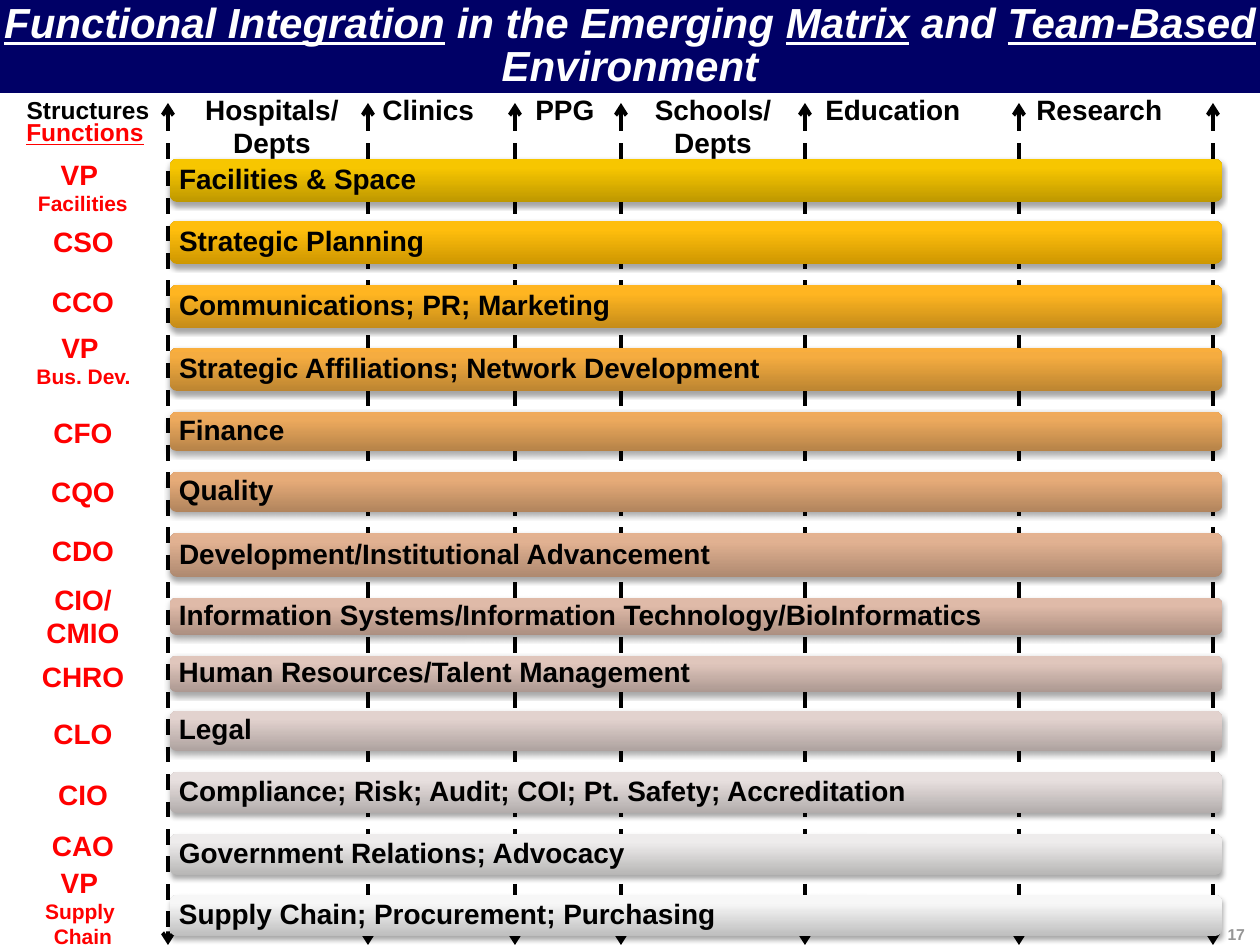
import pptx
import pptx.dml.color
import pptx.enum.dml
import pptx.enum.shapes
import pptx.enum.text
import pptx.oxml
import pptx.util

PX = pptx.util.Inches(1) / 126
NS = 'xmlns:a="http://schemas.openxmlformats.org/drawingml/2006/main"'
ALIGN = pptx.enum.text.PP_ALIGN
ANCHOR = pptx.enum.text.MSO_ANCHOR
AUTO = pptx.enum.text.MSO_AUTO_SIZE
SHAPE = pptx.enum.shapes.MSO_SHAPE
RED = "FF0000"

HEADERS = [
    (192, 86, 160, 81, ["Hospitals/", "Depts"], ALIGN.CENTER),
    (370, 86, 118, 47, ["Clinics"], ALIGN.LEFT),
    (523, 86, 86, 47, ["PPG"], ALIGN.LEFT),
    (641, 86, 144, 81, ["Schools/", "Depts"], ALIGN.CENTER),
    (813, 86, 163, 47, ["Education"], ALIGN.LEFT),
    (1024, 86, 152, 47, ["Research"], ALIGN.LEFT),
]
COLUMN_XS = [368, 515, 621, 805, 1019, 168, 1213]
BARS = [
    (159, 43, "Facilities & Space", "BE9800", "F7C600", "F8C700"),
    (221, 43, "Strategic Planning", "CE9700", "FFBE0D", "FFBF0E"),
    (285, 43, "Communications; PR; Marketing", "C58C19", "FFB521", "FFB623"),
    (348, 43, "Strategic Affiliations; Network Development", "BC8531", "F5AC40", "F9AE3D"),
    (412, 39, "Finance", "B68348", "ECA95D", "F0AA5B"),
    (472, 40, "Quality", "B1845D", "E6AB78", "E9AC77"),
    (533, 44, "Development/Institutional Advancement", "AE8970", "E1B191", "E4B290"),
    (598, 37, "Information Systems/Information Technology/BioInformatics",
     "AC8F81", "DFBAA8", "E2BBA7"),
    (656, 36, "Human Resources/Talent Management", "AC9891", "E0C6BC", "E1C6BC"),
    (711, 40, "Legal", "AEA29F", "E2D2CE", "E4D3CF"),
    (772, 41, "Compliance; Risk; Audit; COI; Pt. Safety; Accreditation",
     "B2ACAB", "E7DFDE", "E8E0DF"),
    (834, 41, "Government Relations; Advocacy", "B7B6B5", "EEECEC", "EFEDED"),
    (895, 41, "Supply Chain; Procurement; Purchasing", "BEBEBE", "F7F7F7", "F8F8F8"),
]
OFFICERS = [
    (25, 151, 116, 72, "VP \n", "Facilities"),
    (40, 218, 87, 47, "CSO", ""),
    (39, 278, 88, 47, "CCO", ""),
    (23, 324, 121, 72, "VP \n", "Bus. Dev."),
    (40, 409, 86, 47, "CFO", ""),
    (38, 468, 90, 47, "CQO", ""),
    (39, 527, 88, 47, "CDO", ""),
    (33, 576, 100, 81, "CIO/\nCMIO", ""),
    (29, 653, 108, 47, "CHRO", ""),
    (40, 710, 86, 47, "CLO", ""),
    (45, 771, 76, 47, "CIO", ""),
    (39, 822, 88, 47, "CAO", ""),
    (32, 859, 102, 97, "VP \n", "Supply \nChain"),
]
TITLE = [
    ("Functional Integration", {"underline": True}),
    (" in the Emerging ", {}),
    ("Matrix", {"underline": True}),
    (" and ", {}),
    ("Team-Based", {"underline": True}),
    (" Environment", {}),
]


def px(n):
    return round(n * PX)


def box(*lengths):
    return [px(n) for n in lengths]


def rgb(value):
    return pptx.dml.color.RGBColor.from_string(value)


def add_xml(parent, xml):
    parent.append(pptx.oxml.parse_xml(xml))


def write(sp, paragraphs, size=16, color="000000", align=ALIGN.LEFT, anchor=ANCHOR.TOP,
          wrap=False, inset=None, spacing=None, after=None, italic=None, underline=None,
          auto=AUTO.SHAPE_TO_FIT_TEXT):
    tf = sp.text_frame
    tf.word_wrap = wrap
    tf.auto_size = auto
    tf.vertical_anchor = anchor
    if inset is not None:
        tf.margin_left = tf.margin_top = tf.margin_right = tf.margin_bottom = px(inset)
    for i, runs in enumerate(paragraphs):
        p = tf.add_paragraph() if i else tf.paragraphs[0]
        p.alignment = align
        if spacing:
            p.line_spacing = spacing
        if after:
            p.space_after = pptx.util.Pt(after)
        for text, fmt in [(runs, {})] if isinstance(runs, str) else runs:
            for j, line in enumerate(text.split("\n")):
                if j:
                    p.add_line_break()
                if not line:
                    continue
                r = p.add_run()
                r.text = line
                r.font.name = "Arial"
                r.font.size = pptx.util.Pt(fmt.get("size", size))
                r.font.bold = True
                r.font.italic = italic
                r.font.underline = fmt.get("underline", underline)
                r.font.color.rgb = rgb(color)


def add_label(s, x, y, w, h, paragraphs, **fmt):
    write(s.shapes.add_textbox(*box(x, y, w, h)), paragraphs, **fmt)


def add_banner(s):
    sp = s.shapes.add_shape(SHAPE.RECTANGLE, *box(0, 0, 1260, 93))
    sp.shadow.inherit = False
    sp.fill.solid()
    sp.fill.fore_color.rgb = rgb("000066")
    sp.line.fill.background()
    s.shapes._spTree.insert(2, sp._element)


def add_title(s):
    sp = s.shapes.title
    sp.left, sp.top, sp.width, sp.height = box(0, 4, 1260, 87)
    write(sp, [TITLE], size=24, color="FFFFFF", align=ALIGN.CENTER, anchor=ANCHOR.MIDDLE,
          wrap=True, inset=0, spacing=0.85, italic=True)


def add_column_line(s, x):
    line = s.shapes.add_connector(pptx.enum.shapes.MSO_CONNECTOR.STRAIGHT,
                                  *box(x, 103, x, 945))
    line.line.color.rgb = rgb("000000")
    line.line.width = pptx.util.Pt(2.25)
    line.line.dash_style = pptx.enum.dml.MSO_LINE.DASH
    ln = line.line._get_or_add_ln()
    for end in ("headEnd", "tailEnd"):
        add_xml(ln, f'<a:{end} {NS} type="arrow"/>')
    add_xml(line._element.spPr, f"<a:effectLst {NS}/>")


def add_bar(s, y, h, text, *colors):
    sp = s.shapes.add_shape(SHAPE.ROUNDED_RECTANGLE, *box(170, y, 1052, h))
    sp.line.fill.background()
    stops = "".join(f'<a:gs pos="{pos}000"><a:srgbClr val="{color}"/></a:gs>'
                    for pos, color in zip((0, 80, 100), colors))
    sp._element.spPr.insert(2, pptx.oxml.parse_xml(
        f'<a:gradFill {NS} rotWithShape="1"><a:gsLst>{stops}</a:gsLst>'
        '<a:lin ang="16200000" scaled="0"/></a:gradFill>'))
    add_xml(sp._element.spPr,
            f'<a:effectLst {NS}><a:outerShdw blurRad="40000" dist="23000" dir="5400000" '
            'rotWithShape="0"><a:srgbClr val="000000"><a:alpha val="35000"/></a:srgbClr>'
            '</a:outerShdw></a:effectLst>')
    write(sp, [text], anchor=ANCHOR.MIDDLE, wrap=True, inset=7, spacing=0.9, after=6,
          auto=AUTO.NONE)


def main():
    prs = pptx.Presentation()
    prs.slide_width, prs.slide_height = box(1260, 945)
    s = prs.slides.add_slide(prs.slide_layouts[5])
    add_banner(s)
    add_title(s)
    add_label(s, 832, 925, 413, 19, ["17"], size=9, color="969696", align=ALIGN.RIGHT,
              anchor=ANCHOR.MIDDLE, wrap=True, inset=0)
    for x in COLUMN_XS:
        add_column_line(s, x)
    for bar in BARS:
        add_bar(s, *bar)
    for x, y, w, h, lines, align in HEADERS:
        add_label(s, x, y, w, h, lines, align=align)
    add_label(s, 13, 89, 150, 43, ["Structures"], size=14, align=ALIGN.CENTER)
    add_label(s, 10, 111, 150, 43, ["Functions"], size=14, color=RED, align=ALIGN.CENTER,
              underline=True)
    for x, y, w, h, role, area in OFFICERS:
        add_label(s, x, y, w, h, [[(role, {}), (area, {"size": 12})]], color=RED,
                  align=ALIGN.CENTER)
    prs.save("out.pptx")


if __name__ == "__main__":
    main()
